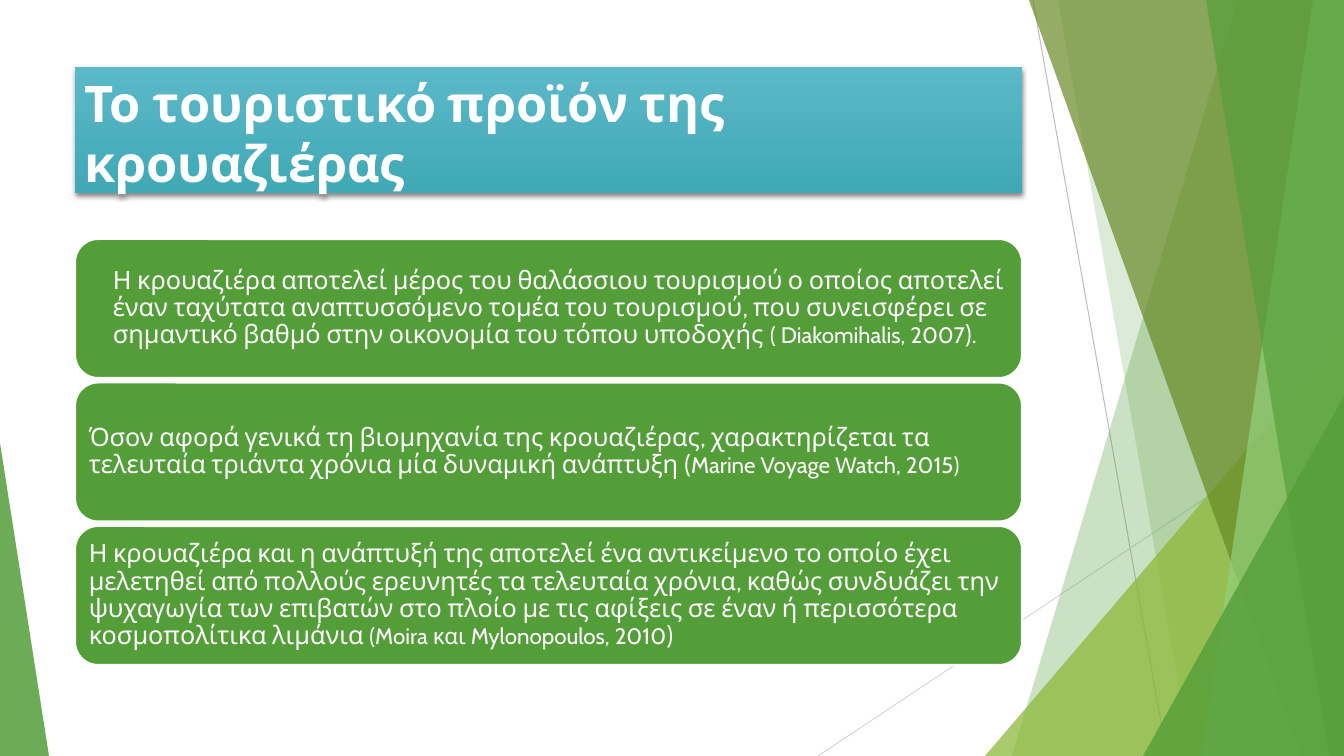
"""Build a slide on the cruise tourism product with three text cards."""
from lxml import etree
from pptx import Presentation
from pptx.dml.color import RGBColor
from pptx.enum.shapes import MSO_CONNECTOR as Connector, MSO_SHAPE as Preset
from pptx.enum.text import MSO_ANCHOR as Anchor, MSO_AUTO_SIZE as AutoSize, PP_ALIGN as Align
from pptx.oxml.ns import qn
from pptx.util import Pt

FONT = "Cabin"
COLORS = {
    "white": "FFFFFF", "green": "549E39", "lime": "8AB833", "olive": "678A26",
    "mint": "93D07D", "gray": "BFBFBF", "light gray": "D9D9D9",
    "teal top": "5BB9C8", "teal bottom": "40A8B6", "black": "000000",
}
TITLE = "Το τουριστικό προϊόν της κρουαζιέρας"
CARDS = [
    [("Η κρουαζιέρα αποτελεί μέρος του θαλάσσιου τουρισμού ο οποίος αποτελεί έναν ταχύτατα "
      "αναπτυσσόμενο τομέα του τουρισμού, που συνεισφέρει σε σημαντικό βαθμό στην οικονομία "
      "του τόπου υποδοχής ", 18), ("( Diakomihalis, 2007", 16), (").", 18)],
    [("Όσον αφορά γενικά τη βιομηχανία της κρουαζιέρας, χαρακτηρίζεται τα τελευταία τριάντα "
      "χρόνια μία δυναμική ανάπτυξη (", 18), ("Marine Voyage Watch, 2015)", 16)],
    [("Η κρουαζιέρα και η ανάπτυξή της αποτελεί ένα αντικείμενο το οποίο έχει μελετηθεί από "
      "πολλούς ερευνητές τα τελευταία χρόνια, καθώς συνδυάζει την ψυχαγωγία των επιβατών στο "
      "πλοίο με τις αφίξεις σε έναν ή περισσότερα κοσμοπολίτικα λιμάνια ", 18),
     ("(Moira και Mylonopoulos, 2010", 16), (")", 18)],
]
BULLETED_CARD = 0

WIDTH, HEIGHT = 1344, 756
EMU_PER_PX = 914400 / 100.8
LEFT, CONTENT_WIDTH = 75, 947
TITLE_TOP, TITLE_HEIGHT = 67, 126
FIRST_CARD_TOP, LAST_CARD_TOP, CARD_HEIGHT = 239, 526, 139
CARD_INSET, BULLET_INDENT = 7, 24

LINES = [((1033, 0), (1167, HEIGHT), "gray"), ((WIDTH, 406), (818, HEIGHT), "light gray")]
BANDS_BACK = [(1238, 1012, "green", 30), (1058, 1191, "green", 20)]
BANDS_FRONT = [(1029, 1301, "olive", 70), (1313, 1202, "mint", 70), (1206, 1329, "green", 65)]
TRIANGLE_BACK = [(985, 336, 359, 1, "lime", 72)]
TRIANGLES_FRONT = [(1143, 396, 201, 1, "green", 80), (0, 443, 49, 0, "green", 85)]


def px(*lengths):
    return [round(length * EMU_PER_PX) for length in lengths]


def rgb(name):
    return RGBColor.from_string(COLORS[name])


def set_alpha(color, percent):
    etree.SubElement(color, qn("a:alpha"), val=str(percent * 1000))


def style_facet(shape, color, opacity):
    shape.shadow.inherit = False
    shape.fill.solid()
    shape.fill.fore_color.rgb = rgb(color)
    shape.line.fill.background()
    set_alpha(shape._element.spPr.find(qn("a:solidFill"))[0], opacity)


def add_bands(slide, bands):
    for top_x, bottom_x, color, opacity in bands:
        builder = slide.shapes.build_freeform(top_x, 0, EMU_PER_PX)
        builder.add_line_segments([(WIDTH, 0), (WIDTH, HEIGHT), (bottom_x, HEIGHT)])
        style_facet(builder.convert_to_shape(), color, opacity)


def add_triangles(slide, triangles):
    for left, top, width, apex, color, opacity in triangles:
        shape = slide.shapes.add_shape(
            Preset.ISOSCELES_TRIANGLE, *px(left, top, width, HEIGHT - top))
        shape.adjustments[0] = apex
        style_facet(shape, color, opacity)


def add_lines(slide):
    for start, end, color in LINES:
        line = slide.shapes.add_connector(Connector.STRAIGHT, *px(*start, *end))
        line.line.color.rgb = rgb(color)
        line.line.width = Pt(0.75)
        etree.SubElement(line._element.spPr, qn("a:effectLst"))


def write_runs(frame, runs, inset, anchor, line_spacing, bold=False):
    frame.word_wrap = True
    frame.auto_size = AutoSize.NONE
    frame.vertical_anchor = anchor
    frame.margin_left, frame.margin_top, frame.margin_right, frame.margin_bottom = px(*inset)
    paragraph = frame.paragraphs[0]
    paragraph.alignment = Align.LEFT
    paragraph.line_spacing = line_spacing
    for text, size in runs:
        run = paragraph.add_run()
        run.text = text
        run.font.name = FONT
        run.font.size = Pt(size)
        run.font.bold = bold
        run.font.color.rgb = rgb("white")
    return paragraph


def add_title(slide):
    title = slide.shapes.title
    title.left, title.top, title.width, title.height = px(
        LEFT, TITLE_TOP, CONTENT_WIDTH, TITLE_HEIGHT)
    title.fill.gradient()
    title.fill.gradient_angle = 270
    for stop, color in zip(title.fill.gradient_stops, ("teal top", "teal bottom")):
        stop.color.rgb = rgb(color)
    title.shadow.inherit = False
    effects = title._element.spPr.find(qn("a:effectLst"))
    shadow = etree.SubElement(effects, qn("a:outerShdw"), blurRad="38100", dist="25400",
                              dir="5400000", rotWithShape="0")
    set_alpha(etree.SubElement(shadow, qn("a:srgbClr"), val=COLORS["black"]), 45)
    write_runs(title.text_frame, [(TITLE, 36)], (9, 5, 9, 5), Anchor.TOP, 1.0, bold=True)


def add_bullet(paragraph):
    properties = paragraph._p.get_or_add_pPr()
    indent = px(BULLET_INDENT)[0]
    properties.set("marL", str(indent))
    properties.set("indent", str(-indent))
    bullet_color = etree.SubElement(properties, qn("a:buClr"))
    etree.SubElement(bullet_color, qn("a:srgbClr"), val=COLORS["green"])
    etree.SubElement(properties, qn("a:buSzPct"), val="80000")
    etree.SubElement(properties, qn("a:buChar"), char="▶")


def add_cards(slide):
    pitch = (LAST_CARD_TOP - FIRST_CARD_TOP) / (len(CARDS) - 1)
    for index, runs in enumerate(CARDS):
        card = slide.shapes.add_shape(Preset.ROUNDED_RECTANGLE, *px(
            LEFT, FIRST_CARD_TOP + index * pitch, CONTENT_WIDTH, CARD_HEIGHT))
        card.shadow.inherit = False
        card.fill.solid()
        card.fill.fore_color.rgb = rgb("green")
        card.line.color.rgb = rgb("white")
        card.line.width = Pt(1.5)
        paragraph = write_runs(card.text_frame, runs, [CARD_INSET] * 4, Anchor.MIDDLE, 0.9)
        if index == BULLETED_CARD:
            add_bullet(paragraph)


def main():
    presentation = Presentation()
    presentation.slide_width, presentation.slide_height = px(WIDTH, HEIGHT)
    slide = presentation.slides.add_slide(presentation.slide_layouts[5])
    add_lines(slide)
    add_bands(slide, BANDS_BACK)
    add_triangles(slide, TRIANGLE_BACK)
    add_bands(slide, BANDS_FRONT)
    add_triangles(slide, TRIANGLES_FRONT)
    add_title(slide)
    add_cards(slide)
    presentation.save("out.pptx")


if __name__ == "__main__":
    main()
